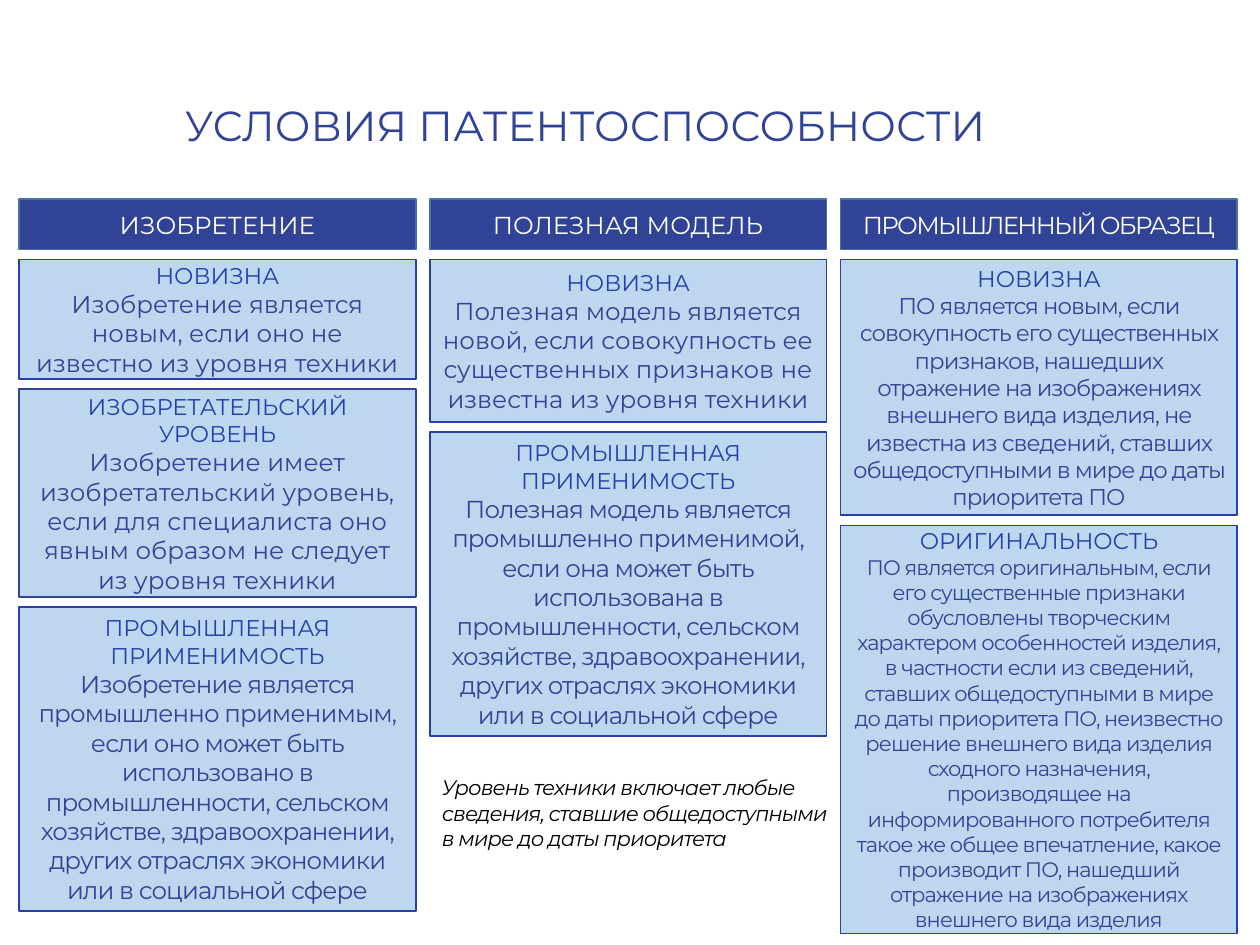
from dataclasses import dataclass

from pptx import Presentation
from pptx.dml.color import RGBColor
from pptx.enum.shapes import MSO_SHAPE
from pptx.enum.text import MSO_ANCHOR, PP_ALIGN
from pptx.util import Inches, Pt

COLOURS = {
    "navy": "314396", "accent": "293DAD", "pale": "BDD7EE",
    "header_edge": "43739E", "white": "FFFFFF", "black": "000000",
}
FONT = "Montserrat"
LEFT, COLUMN_WIDTH, COLUMN_STEP = 0.15, 3.15, 3.26
HEADER_TOP, HEADER_HEIGHT = 1.58, 0.4
CARDS_TOP, CARD_GAP = 2.06, 0.08


@dataclass
class Span:
    text: str
    size: float
    colour: str
    spacing: float = 0
    italic: bool = False


@dataclass
class Card:
    height: float
    heading: str
    body: str
    size: float = 14
    spacing: float = 0
    edge: str = "accent"


@dataclass
class Column:
    title: str
    cards: list[Card]
    spacing: float = 0


def colour(name: str) -> RGBColor:
    return RGBColor.from_string(COLOURS[name])


def write(shape, spans: list[Span], align: PP_ALIGN, line_spacing: float = 1.0) -> None:
    """Write each span as its own paragraph, centred vertically."""
    frame = shape.text_frame
    frame.word_wrap = True
    frame.vertical_anchor = MSO_ANCHOR.MIDDLE
    for index, item in enumerate(spans):
        paragraph = frame.paragraphs[0] if index == 0 else frame.add_paragraph()
        paragraph.alignment = align
        paragraph.line_spacing = line_spacing
        span = paragraph.add_run()
        span.text = item.text
        formats = {"name": FONT, "size": Pt(item.size), "italic": item.italic}
        for key, value in formats.items():
            setattr(span.font, key, value)
        span.font.color.rgb = colour(item.colour)
        if item.spacing:
            span._r.get_or_add_rPr().set("spc", str(round(item.spacing * 100)))


def add_box(page, left: float, top: float, height: float, fill: str, edge: str,
            spans: list[Span]) -> None:
    box = page.shapes.add_shape(MSO_SHAPE.RECTANGLE, Inches(left), Inches(top),
                                Inches(COLUMN_WIDTH), Inches(height))
    box.shadow.inherit = False
    box.fill.solid()
    box.fill.fore_color.rgb = colour(fill)
    box.line.color.rgb = colour(edge)
    box.line.width = Pt(1)
    write(box, spans, PP_ALIGN.CENTER)


def add_label(page, left: float, top: float, width: float, height: float,
              span: Span, line_spacing: float = 1.0) -> None:
    label = page.shapes.add_textbox(Inches(left), Inches(top), Inches(width), Inches(height))
    write(label, [span], PP_ALIGN.LEFT, line_spacing)


def add_column(page, left: float, column: Column) -> None:
    add_box(page, left, HEADER_TOP, HEADER_HEIGHT, "navy", "header_edge",
            [Span(column.title, 14, "white", column.spacing)])
    top = CARDS_TOP
    for card in column.cards:
        add_box(page, left, top, card.height, "pale", card.edge,
                [Span(card.heading, 13, "accent"),
                 Span(card.body, card.size, "navy", card.spacing)])
        top += card.height + CARD_GAP


def applicability(opening: str, used: str) -> Card:
    """The industrial applicability card, shared by two columns."""
    return Card(2.41, "ПРОМЫШЛЕННАЯ ПРИМЕНИМОСТЬ",
                f"{opening} может быть {used} в промышленности, сельском хозяйстве, "
                "здравоохранении, других отраслях экономики или в социальной сфере",
                spacing=-0.5)


COLUMNS = [
    Column("ИЗОБРЕТЕНИЕ", [
        Card(0.95, "НОВИЗНА",
             "Изобретение является новым, если оно не известно из уровня техники"),
        Card(1.65, "ИЗОБРЕТАТЕЛЬСКИЙ УРОВЕНЬ",
             "Изобретение имеет изобретательский уровень, если для специалиста оно "
             "явным образом не следует из уровня техники", edge="navy"),
        applicability("Изобретение является промышленно применимым, если оно", "использовано"),
    ]),
    Column("ПОЛЕЗНАЯ МОДЕЛЬ", [
        Card(1.29, "НОВИЗНА",
             "Полезная модель является новой, если совокупность ее существенных "
             "признаков не известна из уровня техники"),
        applicability("Полезная модель является промышленно применимой, если она",
                      "использована"),
    ]),
    Column("ПРОМЫШЛЕННЫЙ ОБРАЗЕЦ", [
        Card(2.03, "НОВИЗНА",
             "ПО является новым, если совокупность его существенных признаков, нашедших "
             "отражение на изображениях внешнего вида изделия, не известна из сведений, "
             "ставших общедоступными в мире до даты приоритета ПО", 13, -0.5),
        Card(3.24, "ОРИГИНАЛЬНОСТЬ",
             "ПО является оригинальным, если его существенные признаки обусловлены "
             "творческим характером особенностей изделия, в частности если из сведений, "
             "ставших общедоступными в мире до даты приоритета ПО, неизвестно решение "
             "внешнего вида изделия сходного назначения, производящее на информированного "
             "потребителя такое же общее впечатление, какое производит ПО, нашедший "
             "отражение на изображениях внешнего вида изделия", 12, -0.5),
    ], spacing=-1),
]


def main() -> None:
    deck = Presentation()
    deck.slide_width, deck.slide_height = Inches(10), Inches(7.5)
    page = deck.slides.add_slide(deck.slide_layouts[6])

    # Title
    add_label(page, 1.37, 0.29, 7.94, 1.45,
              Span("УСЛОВИЯ ПАТЕНТОСПОСОБНОСТИ", 24, "navy"), 0.9)

    # Columns of conditions
    for index, column in enumerate(COLUMNS):
        add_column(page, LEFT + index * COLUMN_STEP, column)

    # Note under the middle column
    add_label(page, LEFT + COLUMN_STEP, 6.02, 3.37, 0.86,
              Span("Уровень техники включает любые сведения, ставшие общедоступными "
                   "в мире до даты приоритета", 12, "black", -0.5, True))

    deck.save("out.pptx")


if __name__ == "__main__":
    main()
